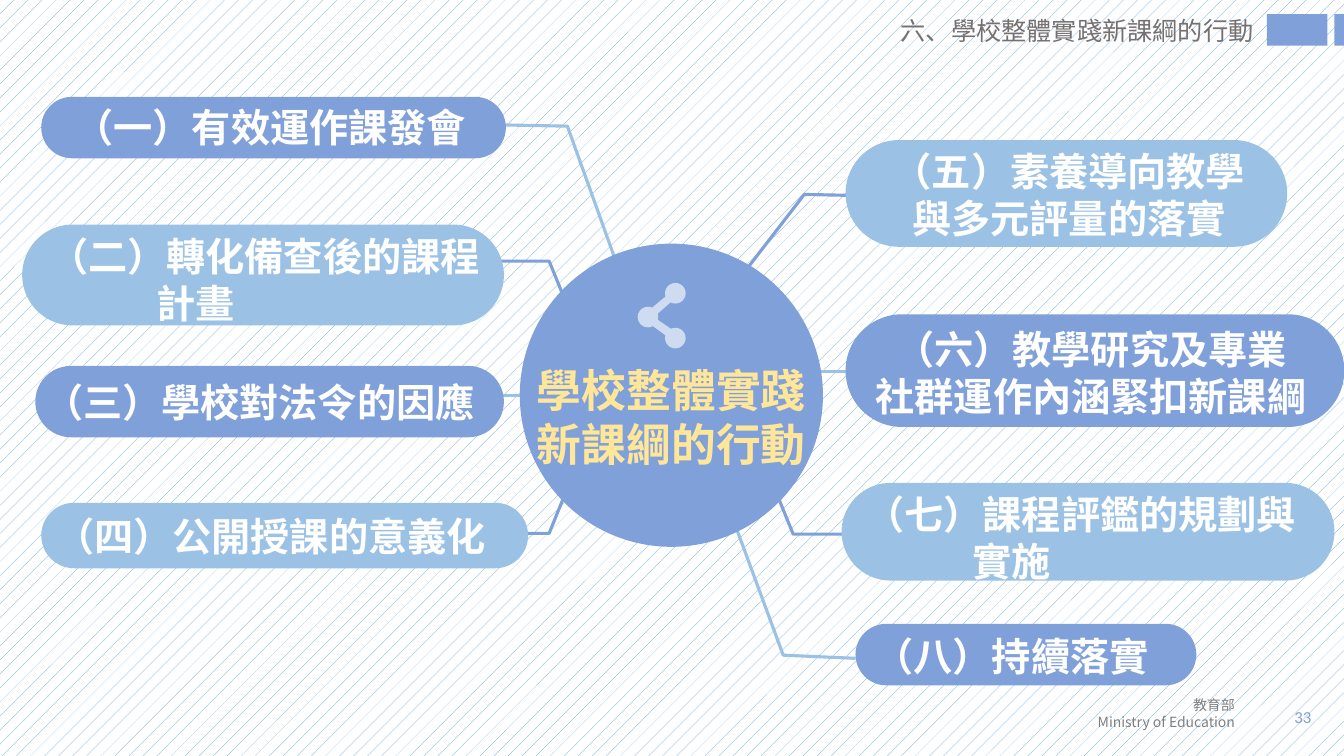
from lxml.etree import SubElement
from pptx import Presentation
from pptx.dml.color import RGBColor as RGB
from pptx.enum.dml import MSO_PATTERN as PATTERN
from pptx.enum.shapes import MSO_CONNECTOR as LINK, MSO_SHAPE as SHAPE
from pptx.enum.text import MSO_ANCHOR as ANCHOR, PP_ALIGN as ALIGN
from pptx.oxml.ns import qn
from pptx.util import Cm, Pt

COLORS = {
    "deep": "80A0DA", "light": "9BC2E5", "icon": "CFDBF1", "gold": "FFE699",
    "white": "FFFFFF", "hatch": "5B9BD5", "header": "767171", "footer": "808080",
}
CJK = "Noto Sans CJK SC"
FORMATS = {
    "center": {"size": Pt(32), "bold": True, "name": CJK},
    "action": {"size": Pt(28), "bold": True, "name": CJK},
    "header": {"size": Pt(18), "name": CJK},
    "footer": {"size": Pt(10), "name": CJK},
    "number": {"size": Pt(12), "name": "Calibri"},
}


def rgb(name):
    return RGB.from_string(COLORS[name])


class Board:
    def __init__(self, slide):
        self.slide = slide
        self.shapes = slide.shapes

    def background(self):
        fill = self.slide.background.fill
        fill.patterned()
        fill.pattern = PATTERN.PERCENT_5
        fill.fore_color.rgb = rgb("hatch")
        fill.back_color.rgb = rgb("white")

    def paint(self, shape, color):
        shape.shadow.inherit = False
        shape.fill.solid()
        shape.fill.fore_color.rgb = rgb(color)
        shape.line.fill.background()

    def stroke(self, line, color):
        line.color.rgb = rgb(color)
        line.width = Pt(2.25)

    def solid(self, kind, box, color):
        shape = self.shapes.add_shape(kind, *map(Cm, box))
        self.paint(shape, color)
        return shape

    def pill(self, box, color):
        self.solid(SHAPE.ROUNDED_RECTANGLE, box, color).adjustments[0] = 0.5

    def disc(self, x, y, radius, color):
        self.solid(SHAPE.OVAL, (x - radius, y - radius, 2 * radius, 2 * radius), color)

    def outline(self, points, close):
        start, *rest = [(Cm(x), Cm(y)) for x, y in points]
        builder = self.shapes.build_freeform(*start, scale=1.0)
        builder.add_line_segments(rest, close=close)
        return builder.convert_to_shape()

    def polygon(self, points, color):
        self.paint(self.outline(points, True), color)

    def bend(self, points, color):
        path = self.outline(points, False)
        path.shadow.inherit = False
        path.fill.background()
        self.stroke(path.line, color)

    def straight(self, points, color):
        (x1, y1), (x2, y2) = points
        link = self.shapes.add_connector(LINK.STRAIGHT, Cm(x1), Cm(y1), Cm(x2), Cm(y2))
        self.stroke(link.line, color)
        SubElement(link.line._get_or_add_ln(), qn("a:headEnd"), type="oval")
        SubElement(link._element.spPr, qn("a:effectLst"))

    def text(self, box, lines, style, color, align=ALIGN.LEFT, wrap=True,
             anchor=ANCHOR.TOP, indent=0):
        frame = self.shapes.add_textbox(*map(Cm, box)).text_frame
        frame.word_wrap = wrap
        frame.vertical_anchor = anchor
        for index, line in enumerate(lines):
            paragraph = frame.add_paragraph() if index else frame.paragraphs[0]
            paragraph.alignment = align
            if index and indent:
                paragraph._p.get_or_add_pPr().set("marL", str(Cm(indent)))
            run = paragraph.add_run()
            run.text = line
            for key, value in FORMATS[style].items():
                setattr(run.font, key, value)
            run.font.color.rgb = rgb(color)
            SubElement(run._r.get_or_add_rPr(), qn("a:ea"), typeface=FORMATS[style]["name"])


BRANCHES = [
    ("deep", [(14.5, 11.81), (13.84, 13.44), (11.96, 13.44)]),
    ("deep", [(14.5, 8.2), (13.84, 6.58), (11.96, 6.58)]),
    ("light", [(13.82, 9.96), (11.91, 9.96)]),
    ("deep", [(19.33, 11.84), (19.99, 13.46), (21.87, 13.46)]),
    ("deep", [(18.72, 6.91), (20.27, 4.9), (21.69, 4.93)]),
    ("light", [(20.14, 9.37), (22.05, 9.37)]),
    ("light", [(15.72, 7.14), (14.3, 3.18), (12.73, 3.15)]),
    ("light", [(18.21, 12.37), (19.74, 16.51), (21.56, 16.59)]),
]
ACTIONS = [
    ("deep", (1.04, 2.44, 11.71, 1.55), (1.63, 2.49, 10.54, 1.45),
     ["（一）有效運作課發會"], {}),
    ("light", (0.56, 5.66, 12.14, 2.54), (0.99, 5.74, 12.12, 2.64),
     ["（二）轉化備查後的課程", "計畫"], {"indent": 2.7}),
    ("deep", (0.89, 9.22, 11.81, 1.8), (0.86, 9.42, 11.38, 1.45),
     ["（三）學校對法令的因應"], {}),
    ("light", (1.04, 12.67, 12.27, 1.65), (1.14, 12.78, 11.63, 1.45),
     ["（四）公開授課的意義化"], {}),
    ("light", (21.31, 3.53, 11.13, 2.69), (22.05, 3.58, 9.78, 2.64),
     ["（五）素養導向教學與多元評量的落實"], {"align": ALIGN.CENTER}),
    ("deep", (21.31, 7.92, 12.57, 2.84), (21.64, 8.08, 11.71, 2.64),
     ["（六）教學研究及專業", "社群運作內涵緊扣新課綱"], {"align": ALIGN.CENTER}),
    ("light", (21.21, 12.17, 12.42, 2.46), (21.56, 12.22, 12.34, 2.64),
     ["（七）課程評鑑的規劃與", "實施"], {"indent": 2.7}),
    ("deep", (21.56, 15.72, 8.59, 1.55), (21.79, 15.82, 7.62, 1.45),
     ["（八）持續落實"], {}),
]
SHARE_NODES = [(17.02, 7.39), (16.33, 7.99), (17.02, 8.52)]
SHARE_LINKS = [
    [(16.87, 7.39), (16.99, 7.54), (16.41, 8.05), (16.26, 7.9)],
    [(16.99, 8.61), (17.12, 8.43), (16.46, 7.98), (16.36, 8.15)],
]


def main():
    deck = Presentation()
    deck.slide_width, deck.slide_height = Cm(33.87), Cm(19.05)
    board = Board(deck.slides.add_slide(deck.slide_layouts[6]))
    board.background()

    for color, points in BRANCHES:
        draw = board.straight if len(points) == 2 else board.bend
        draw(points, color)

    board.disc(16.92, 9.96, 3.82, "deep")
    for points in SHARE_LINKS:
        board.polygon(points, "icon")
    for x, y in SHARE_NODES:
        board.disc(x, y, 0.26, "icon")
    board.text((13.28, 9.02, 7.57, 3), ["學校整體實踐新課綱的行動"], "center", "gold")

    for color, pill, label, lines, layout in ACTIONS:
        board.pill(pill, color)
        board.text(label, lines, "action", "white", **layout)

    board.text((27.58, 17.68, 5.72, 0.76), ["33"], "number", "deep",
               align=ALIGN.RIGHT, anchor=ANCHOR.MIDDLE)
    board.text((27.31, 17.42, 4.06, 1.12), ["教育部", "Ministry of Education"],
               "footer", "footer", align=ALIGN.RIGHT, wrap=False)
    board.text((22.45, 0.25, 9.5, 1.02), ["六、學校整體實踐新課綱的行動"],
               "header", "header", wrap=False)
    for left, width in ((31.93, 1.52), (33.63, 0.24)):
        board.solid(SHAPE.RECTANGLE, (left, 0.36, width, 0.79), "deep")

    deck.save("out.pptx")


if __name__ == "__main__":
    main()
